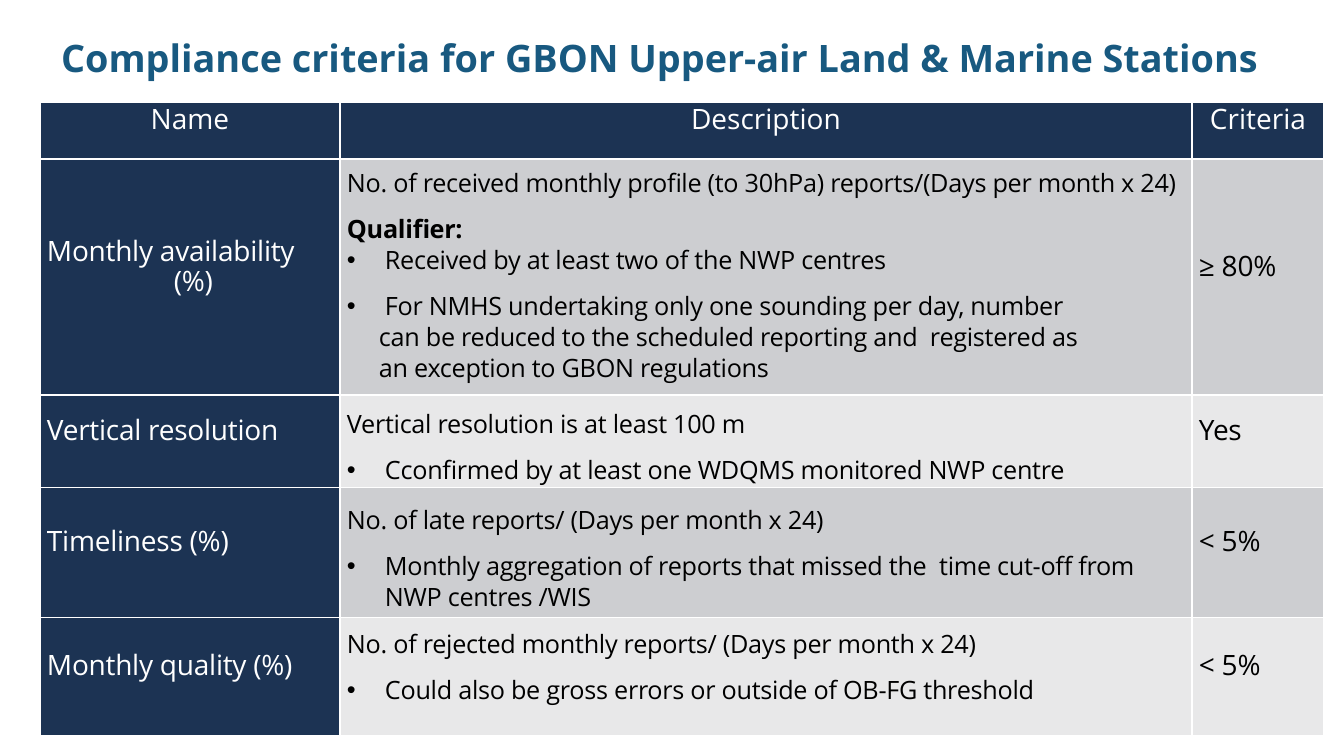
"""Builds the slide with the compliance criteria for upper-air stations."""
from lxml import etree
from pptx import Presentation
from pptx.dml.color import RGBColor
from pptx.enum.text import MSO_ANCHOR, PP_ALIGN
from pptx.oxml.ns import qn
from pptx.util import Pt

PX = 9071
FONT = "Open Sans"
NAVY, WHITE, BLACK = "1C3353", "FFFFFF", "000000"
BANDS = ("CDCED1", "E8E8E9")
LEFT, CENTER = PP_ALIGN.LEFT, PP_ALIGN.CENTER
MIDDLE = MSO_ANCHOR.MIDDLE
LINE, HALF_LINE = Pt(22), Pt(11)
TIGHT = -20
COLUMN_WIDTHS = (300, 852, 132)
ROW_HEIGHTS = (57, 236, 92, 130, 118)
HEADINGS = ("Name", "Description", "Criteria")

CRITERIA = (
    (("Monthly availability", " (%)"),
     (("plain", "No. of received monthly profile (to 30hPa) reports/(Days per month x 24)"),
      ("bold", "Qualifier:"),
      ("tight bullet", "Received by at least two of the NWP centres"),
      ("bullet", "For NMHS undertaking only one sounding per day, number"),
      ("continuation", "can be reduced to the scheduled reporting and  registered as\v"
                       "an exception to GBON regulations")),
     "≥ 80%", (0, 0)),
    (("Vertical resolution",),
     (("plain", "Vertical resolution is at least 100 m"),
      ("bullet", "Cconfirmed by at least one WDQMS monitored NWP centre")),
     "Yes", (HALF_LINE, 0)),
    (("Timeliness (%)",),
     (("plain", "No. of late reports/ (Days per month x 24)"),
      ("bullet", "Monthly aggregation of reports that missed the  time cut-off from\v"
                 "NWP centres /WIS")),
     "< 5%", (HALF_LINE, 0)),
    (("Monthly quality (%)",),
     (("plain", "No. of rejected monthly reports/ (Days per month x 24)"),
      ("bullet", "Could also be gross errors or outside of OB-FG threshold")),
     "< 5%", (0, HALF_LINE)),
)


def px(length):
    """Turn pixels into EMU."""
    return length * PX


def rgb(color):
    """Turn a hex string into a colour."""
    return RGBColor.from_string(color)


def set_font(paragraph, size, color, bold=False, spacing=0):
    """Set the font and letter spacing of a whole paragraph."""
    font = paragraph.font
    font.name, font.size, font.bold = FONT, Pt(size), bold
    font.color.rgb = rgb(color)
    if spacing:
        for run in paragraph.runs:
            run._r.get_or_add_rPr().set("spc", str(spacing))


def indent(paragraph, left, first=0):
    """Set the left and first-line indents of a paragraph."""
    properties = paragraph._p.get_or_add_pPr()
    properties.set("marL", str(px(left)))
    properties.set("indent", str(px(first)))


def add_bullet(paragraph):
    """Give a paragraph a black bullet with a hanging indent."""
    indent(paragraph, 38, -38)
    properties = paragraph._p.get_or_add_pPr()
    bullet_color = etree.SubElement(properties, qn("a:buClr"))
    etree.SubElement(bullet_color, qn("a:srgbClr"), val=BLACK)
    etree.SubElement(properties, qn("a:buFont"), typeface="Arial")
    etree.SubElement(properties, qn("a:buChar"), char="•")


def style_cell(cell, fill, margins):
    """Set fill, anchor and margins of a cell."""
    cell.fill.solid()
    cell.fill.fore_color.rgb = rgb(fill)
    cell.vertical_anchor = MIDDLE
    cell.margin_left = cell.margin_right = px(7)
    cell.margin_top, cell.margin_bottom = margins


def next_paragraph(cell, position, text):
    """Fill the first paragraph of a cell or add one below it."""
    frame = cell.text_frame
    paragraph = frame.add_paragraph() if position else frame.paragraphs[0]
    paragraph.text = text
    paragraph.line_spacing = LINE
    return paragraph


def fill_label(cell, lines, fill, color, alignments, spacing=TIGHT):
    """Write a heading, name or criterion, one alignment for each line."""
    style_cell(cell, fill, (0, HALF_LINE))
    for position, (line, alignment) in enumerate(zip(lines, alignments)):
        paragraph = next_paragraph(cell, position, line)
        paragraph.alignment = alignment
        set_font(paragraph, 20, color, spacing=spacing)


def fill_description(cell, items, fill, margins):
    """Write the description with its qualifiers."""
    style_cell(cell, fill, margins)
    for position, (kind, text) in enumerate(items):
        paragraph = next_paragraph(cell, position, text)
        if position and kind in ("bold", "bullet"):
            paragraph.space_before = HALF_LINE
        if kind.endswith("bullet"):
            add_bullet(paragraph)
        elif kind == "continuation":
            indent(paragraph, 32)
        set_font(paragraph, 18, BLACK, kind == "bold", TIGHT)


def add_title(slide):
    """Place and format the slide title."""
    title = slide.shapes.title
    title.left, title.top, title.width, title.height = map(px, (51, 12, 1246, 90))
    frame = title.text_frame
    frame.text = "Compliance criteria for GBON Upper-air Land & Marine Stations"
    frame.vertical_anchor = MIDDLE
    frame.word_wrap = True
    heading = frame.paragraphs[0]
    heading.alignment = LEFT
    set_font(heading, 27, "185980", True)


def add_criteria_table(slide):
    """Add the table of compliance criteria."""
    table = slide.shapes.add_table(
        len(ROW_HEIGHTS), len(COLUMN_WIDTHS), px(40), px(102),
        px(sum(COLUMN_WIDTHS)), px(sum(ROW_HEIGHTS))).table
    for column, width in zip(table.columns, COLUMN_WIDTHS):
        column.width = px(width)
    for row, height in zip(table.rows, ROW_HEIGHTS):
        row.height = px(height)
    for column, heading in enumerate(HEADINGS):
        fill_label(table.cell(0, column), (heading,), NAVY, WHITE, (CENTER,), 0)
    for row, (name, description, criterion, margins) in enumerate(CRITERIA, 1):
        band = BANDS[(row - 1) % 2]
        fill_label(table.cell(row, 0), name, NAVY, WHITE, (LEFT, CENTER))
        fill_description(table.cell(row, 1), description, band, margins)
        fill_label(table.cell(row, 2), (criterion,), band, BLACK, (LEFT,))


def main():
    """Build and save the presentation."""
    presentation = Presentation()
    presentation.slide_width, presentation.slide_height = px(1344), px(756)
    slide = presentation.slides.add_slide(presentation.slide_layouts[5])
    add_title(slide)
    add_criteria_table(slide)
    presentation.save("out.pptx")


if __name__ == "__main__":
    main()
